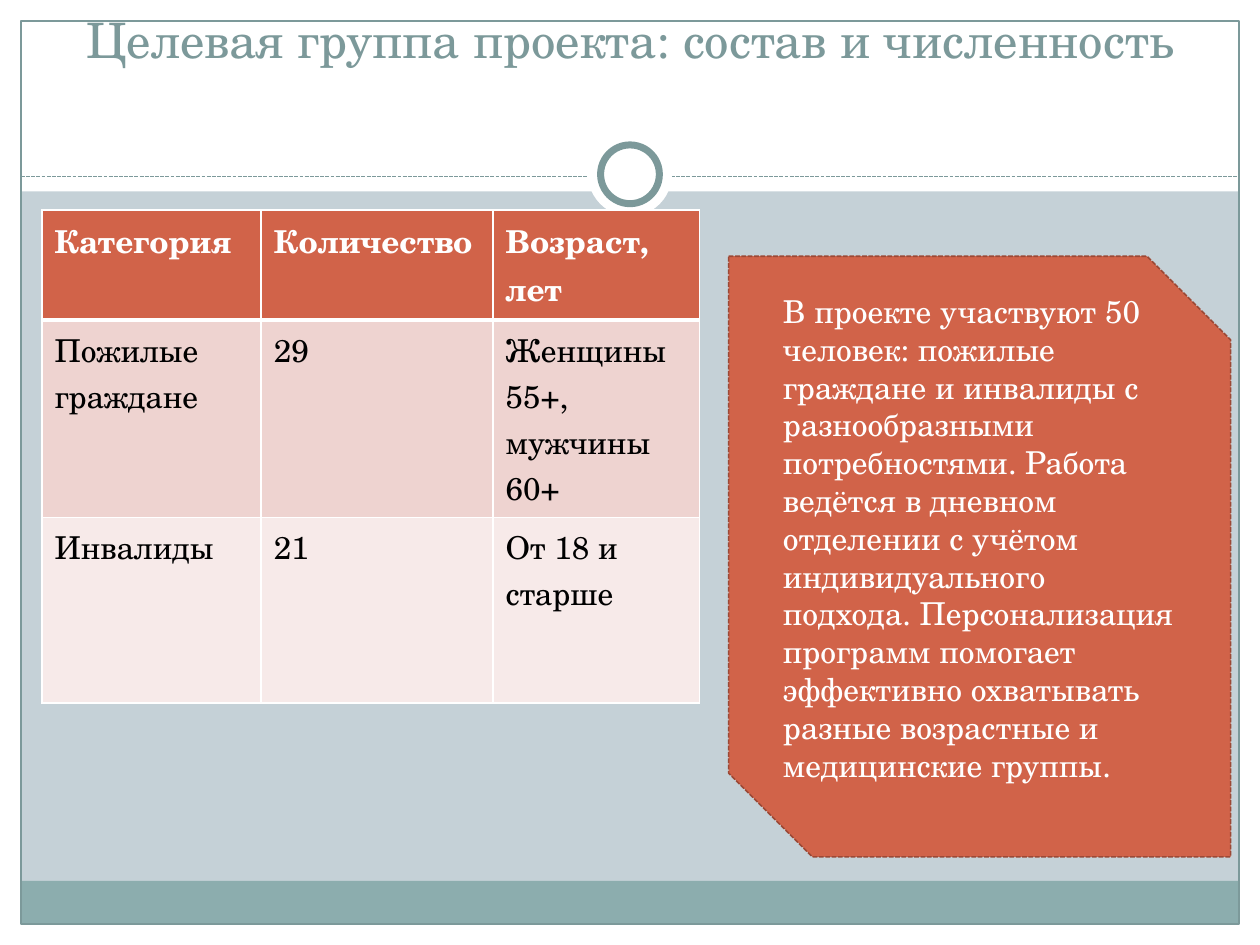
import pptx
import pptx.util
import pptx.dml.color
import pptx.enum.dml
import pptx.enum.shapes
import pptx.enum.text
import pptx.oxml
import pptx.oxml.ns

Pt = pptx.util.Pt
SHAPE = pptx.enum.shapes.MSO_SHAPE
ANCHOR = pptx.enum.text.MSO_ANCHOR
ALIGN = pptx.enum.text.PP_ALIGN
DASH = pptx.enum.dml.MSO_LINE

FONT = "TeX Gyre Schola"
GRID_COLS, GRID_ROWS = 60, 45
UNIT = pptx.util.Inches(10) / GRID_COLS
COLORS = {
    "back": "C5D1D7", "white": "FFFFFF", "black": "000000", "teal": "7C999A",
    "band": "8CADAE", "accent": "D16349", "edge": "9B4936",
    "row_dark": "EED3D0", "row_light": "F7EAE9",
}
TITLE = "Целевая группа проекта: состав и численность"
NOTE = (
    "В проекте участвуют 50 человек: пожилые граждане и инвалиды с "
    "разнообразными потребностями. Работа ведётся в дневном отделении с "
    "учётом индивидуального подхода. Персонализация программ помогает "
    "эффективно охватывать разные возрастные и медицинские группы."
)
ROWS = [
    ("Категория", "Количество", "Возраст, лет"),
    ("Пожилые граждане", "29", "Женщины 55+, мужчины 60+"),
    ("Инвалиды", "21", "От 18 и старше"),
]
ROW_FILLS = ["accent", "row_dark", "row_light"]
COL_WIDTHS = [10.44, 11.04, 9.84]
ROW_HEIGHTS = [4.62, 8.82, 8.82]


def rgb(name):
    return pptx.dml.color.RGBColor.from_string(COLORS[name])


def grid(*cells):
    return [round(c * UNIT) for c in cells]


def set_font(p, size, color, bold=False):
    p.font.name = FONT
    p.font.size = Pt(size)
    p.font.bold = bold
    p.font.color.rgb = rgb(color)


def set_line(line, color, width, dash=None):
    line.color.rgb = rgb(color)
    line.width = Pt(width)
    if dash:
        line.dash_style = dash


def add_shape(s, kind, box, fill=None, line=None):
    sp = s.shapes.add_shape(kind, *grid(*box))
    sp.shadow.inherit = False
    if fill:
        sp.fill.solid()
        sp.fill.fore_color.rgb = rgb(fill)
    else:
        sp.fill.background()
    if line:
        set_line(sp.line, *line)
    else:
        sp.line.fill.background()
    return sp


def add_rule(s, left, right, y):
    cn = s.shapes.add_connector(
        pptx.enum.shapes.MSO_CONNECTOR.STRAIGHT, *grid(left, y, right, y))
    set_line(cn.line, "teal", 0.75, DASH.SQUARE_DOT)
    cn._element.spPr.append(pptx.oxml.parse_xml(
        f"<a:effectLst {pptx.oxml.ns.nsdecls('a')}/>"))


def add_frame(s):
    for box, fill in [
        ((0, 44, GRID_COLS, 1), "white"),
        ((0, 0, GRID_COLS, 9.12), "white"),
        ((0, 0, 1, GRID_ROWS), "white"),
        ((59, 0, 1, GRID_ROWS), "white"),
        ((1, 41.95, 58, 2.05), "band"),
    ]:
        add_shape(s, SHAPE.RECTANGLE, box, fill)
    add_shape(s, SHAPE.RECTANGLE, (1, 1, 58, 43), line=("teal", 0.75))
    add_rule(s, 1, 59, 8.4)
    add_shape(s, SHAPE.OVAL, (28, 6.3, 4, 4), "white")
    add_shape(s, SHAPE.OVAL, (28.6, 6.9, 2.8, 2.8), "white", ("teal", 4))


def set_title(s):
    sp = s.shapes.title
    sp.left, sp.top, sp.width, sp.height = grid(2, 1.5, 56, 5)
    tf = sp.text_frame
    tf.text = TITLE
    tf.word_wrap = True
    tf.auto_size = pptx.enum.text.MSO_AUTO_SIZE.NONE
    tf.vertical_anchor = ANCHOR.BOTTOM
    tf.margin_bottom = Pt(39)
    p = tf.paragraphs[0]
    p.alignment = ALIGN.CENTER
    set_font(p, 27.9, "teal")
    sp._element.getparent().append(sp._element)


def set_borders(cell, bottom):
    tcPr = cell._tc.get_or_add_tcPr()
    widths = {"lnL": 1, "lnR": 1, "lnT": 1, "lnB": bottom}
    for i, (tag, width) in enumerate(widths.items()):
        tcPr.insert(i, pptx.oxml.parse_xml(
            f'<a:{tag} {pptx.oxml.ns.nsdecls("a")} w="{Pt(width)}">'
            f'<a:solidFill><a:srgbClr val="{COLORS["white"]}"/></a:solidFill>'
            f'</a:{tag}>'))


def fill_cell(cell, text, fill, header):
    cell.text = text
    cell.fill.solid()
    cell.fill.fore_color.rgb = rgb(fill)
    set_borders(cell, 3 if header else 1)
    p = cell.text_frame.paragraphs[0]
    set_font(p, 18, "white" if header else "black", header)


def add_group_table(s):
    box = grid(2, 10, sum(COL_WIDTHS), sum(ROW_HEIGHTS))
    table = s.shapes.add_table(len(ROWS), len(COL_WIDTHS), *box).table
    for col, width in zip(table.columns, grid(*COL_WIDTHS)):
        col.width = width
    for r, (row, height) in enumerate(zip(table.rows, grid(*ROW_HEIGHTS))):
        row.height = height
        for cell, text in zip(row.cells, ROWS[r]):
            fill_cell(cell, text, ROW_FILLS[r], r == 0)


def add_note(s):
    sp = add_shape(s, SHAPE.SNIP_2_DIAG_RECTANGLE, (34.7, 12.2, 23.9, 28.6),
                   "accent", ("edge", 0.9, DASH.SQUARE_DOT))
    tf = sp.text_frame
    tf.text = NOTE
    tf.word_wrap = True
    tf.vertical_anchor = ANCHOR.MIDDLE
    tf.margin_bottom = Pt(25)
    p = tf.paragraphs[0]
    p.alignment = ALIGN.LEFT
    set_font(p, 18, "white")


def main():
    prs = pptx.Presentation()
    prs.slide_width, prs.slide_height = grid(GRID_COLS, GRID_ROWS)
    s = prs.slides.add_slide(prs.slide_layouts.get_by_name("Title Only"))
    s.background.fill.solid()
    s.background.fill.fore_color.rgb = rgb("back")
    add_frame(s)
    set_title(s)
    add_group_table(s)
    add_note(s)
    prs.save("out.pptx")


if __name__ == "__main__":
    main()
